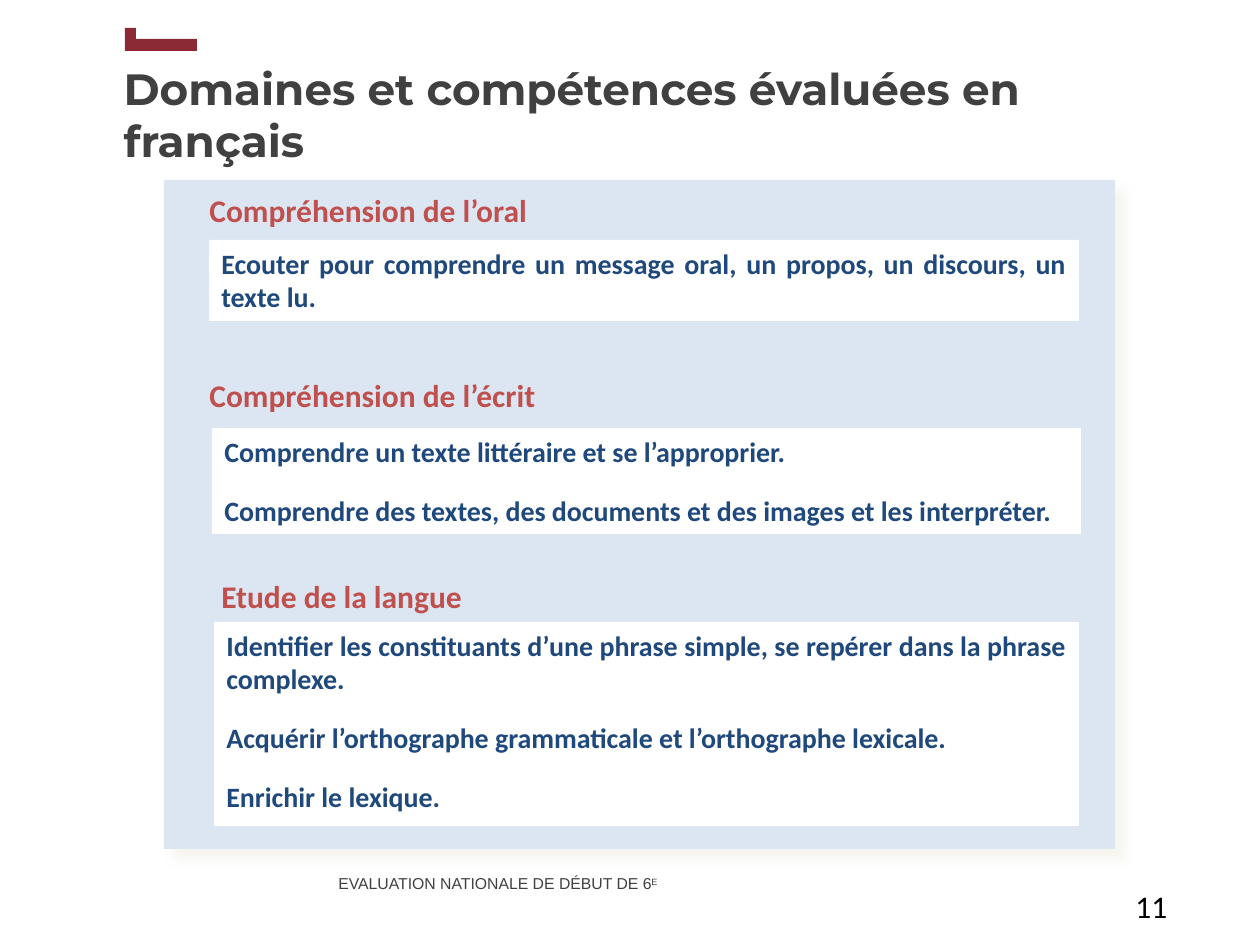
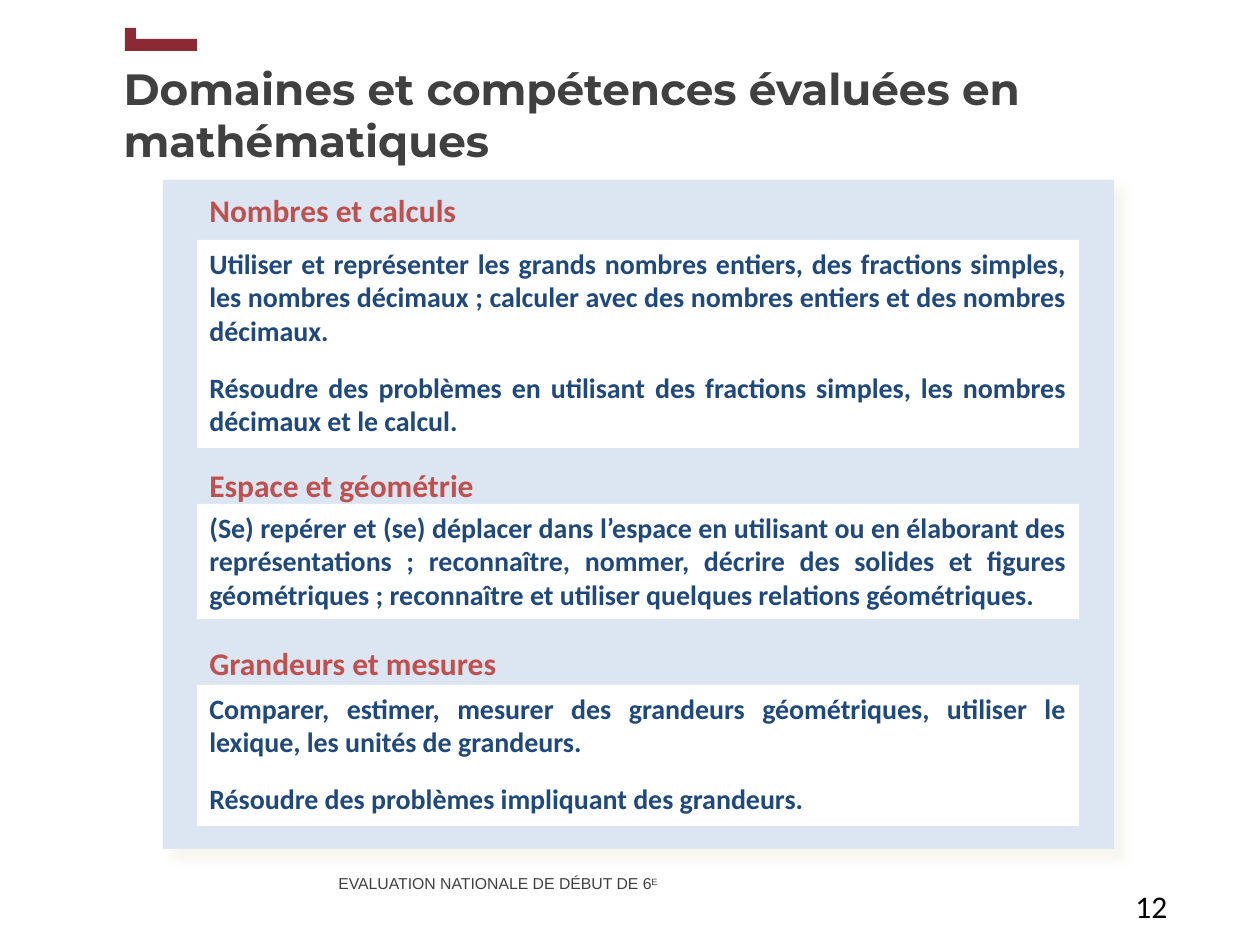
from lxml.etree import SubElement
from pptx import Presentation
from pptx.dml.color import RGBColor
from pptx.enum.shapes import MSO_SHAPE
from pptx.enum.text import MSO_ANCHOR as Anchor, MSO_AUTO_SIZE as AutoSize, PP_ALIGN as Align
from pptx.oxml.ns import qn
from pptx.util import Emu, Pt

COLORS = {
    "title": "404040", "accent": "8B2934", "panel": "DCE6F2", "shadow": "EEECE1",
    "heading": "C0504D", "skill": "1F497D", "card": "FFFFFF", "number": "000000",
}
FOOTER = ("EVALUATION NATIONALE DE DÉBUT DE 6", "E")
TITLE_BOX = (111, 25, 1086, 178)
FOOTER_BOX = (326, 835, 489, 93)
NUMBER_BOX = (1123, 881, 62, 50)
ACCENT_BARS = [(125, 28, 11, 23), (125, 39, 72, 12)]
PANEL_TOP, PANEL_WIDTH, PANEL_HEIGHT = 180, 951, 669
HEADING_WIDTH, HEADING_HEIGHT = 792, 50

SLIDES = [
    {
        "title": "Domaines et compétences évaluées en français",
        "number": "11",
        "panel_left": 164,
        "skill_gap": 14.6,
        "domains": [
            ("Compréhension de l’oral", (197, 185), (209, 240, 870, 81), [
                "Ecouter pour comprendre un message oral, un propos, un discours, un texte lu.",
            ]),
            ("Compréhension de l’écrit", (197, 370), (212, 428, 869, 106), [
                "Comprendre un texte littéraire et se l’approprier.",
                "Comprendre des textes, des documents et des images et les interpréter.",
            ]),
            ("Etude de la langue", (209, 571), (214, 622, 865, 204), [
                "Identifier les constituants d’une phrase simple, se repérer dans la phrase complexe.",
                "Acquérir l’orthographe grammaticale et l’orthographe lexicale.",
                "Enrichir le lexique.",
            ]),
        ],
    },
    {
        "title": "Domaines et compétences évaluées en mathématiques",
        "number": "12",
        "panel_left": 163,
        "skill_gap": 13.4,
        "domains": [
            ("Nombres et calculs", (197, 185), (197, 240, 882, 208), [
                "Utiliser et représenter les grands nombres entiers, des fractions simples, "
                "les nombres décimaux ; calculer avec des nombres entiers et des nombres décimaux.",
                "Résoudre des problèmes en utilisant des fractions simples, "
                "les nombres décimaux et le calcul.",
            ]),
            ("Espace et géométrie", (197, 460), (197, 504, 882, 115), [
                "(Se) repérer et (se) déplacer dans l’espace en utilisant ou en élaborant des "
                "représentations ; reconnaître, nommer, décrire des solides et figures "
                "géométriques ; reconnaître et utiliser quelques relations géométriques.",
            ]),
            ("Grandeurs et mesures", (197, 638), (197, 685, 882, 141), [
                "Comparer, estimer, mesurer des grandeurs géométriques, utiliser le lexique, "
                "les unités de grandeurs.",
                "Résoudre des problèmes impliquant des grandeurs.",
            ]),
        ],
    },
]


def px(value):
    return Emu(round(value * 914400 / 126))


def color(name):
    return RGBColor.from_string(COLORS[name])


def place(shape, box):
    shape.left, shape.top, shape.width, shape.height = map(px, box)


def add_run(paragraph, text, size, color_name, bold=False, font_name="Calibri"):
    run = paragraph.add_run()
    run.text = text
    run.font.name = font_name
    run.font.size = Pt(size)
    run.font.bold = bold
    run.font.color.rgb = color(color_name)
    return run


def setup_frame(shape, anchor=Anchor.TOP):
    frame = shape.text_frame
    frame.word_wrap = True
    frame.auto_size = AutoSize.NONE
    frame.vertical_anchor = anchor
    return frame


def add_label(slide, box, text, size, color_name, bold=False):
    frame = setup_frame(slide.shapes.add_textbox(*map(px, box)))
    add_run(frame.paragraphs[0], text, size, color_name, bold)


def add_rectangle(shapes, box, fill_name):
    rectangle = shapes.add_shape(MSO_SHAPE.RECTANGLE, *map(px, box))
    rectangle.shadow.inherit = False
    rectangle.fill.solid()
    rectangle.fill.fore_color.rgb = color(fill_name)
    rectangle.line.fill.background()
    return rectangle


def add_panel(slide, left):
    panel = add_rectangle(slide.shapes, (left, PANEL_TOP, PANEL_WIDTH, PANEL_HEIGHT), "panel")
    effects = panel.element.spPr.find(qn("a:effectLst"))
    shadow = SubElement(effects, qn("a:outerShdw"), blurRad=str(Pt(5)), dist=str(Pt(8.5)),
                        dir="2700000", algn="tl", rotWithShape="0")
    tint = SubElement(shadow, qn("a:srgbClr"), val=COLORS["shadow"])
    SubElement(tint, qn("a:alpha"), val="50000")


def add_title(slide, text):
    title = slide.shapes.title
    place(title, TITLE_BOX)
    paragraph = setup_frame(title, Anchor.MIDDLE).paragraphs[0]
    paragraph.alignment = Align.LEFT
    add_run(paragraph, text, 25, "title", True, "Montserrat")


def add_footer(slide, number):
    footer = slide.shapes.add_textbox(*map(px, FOOTER_BOX))
    paragraph = setup_frame(footer, Anchor.MIDDLE).paragraphs[0]
    paragraph.line_spacing = Pt(13.2)
    text, superscript = FOOTER
    add_run(paragraph, text, 9, "title", font_name="Arial")
    raised = add_run(paragraph, superscript, 9, "title", font_name="Arial")
    raised.font._element.set("baseline", "30000")
    add_label(slide, NUMBER_BOX, number, 18, "number")


def add_domain(slide, heading, position, card_box, skills, gap):
    card = add_rectangle(slide.shapes, card_box, "card")
    frame = setup_frame(card)
    for index, skill in enumerate(skills):
        paragraph = frame.add_paragraph() if index else frame.paragraphs[0]
        paragraph.alignment = Align.JUSTIFY
        if index:
            paragraph.space_before = Pt(gap)
        add_run(paragraph, skill, 16, "skill", True)
    add_label(slide, (*position, HEADING_WIDTH, HEADING_HEIGHT), heading, 18, "heading", True)


def build_slide(presentation, content):
    slide = presentation.slides.add_slide(presentation.slide_layouts.get_by_name("Title Only"))
    add_title(slide, content["title"])
    add_footer(slide, content["number"])
    accent = slide.shapes.add_group_shape()
    for bar in ACCENT_BARS:
        add_rectangle(accent.shapes, bar, "accent")
    add_panel(slide, content["panel_left"])
    for domain in content["domains"]:
        add_domain(slide, *domain, content["skill_gap"])


def main():
    presentation = Presentation()
    presentation.slide_width, presentation.slide_height = px(1260), px(945)
    for content in SLIDES:
        build_slide(presentation, content)
    presentation.save("out.pptx")


if __name__ == "__main__":
    main()
